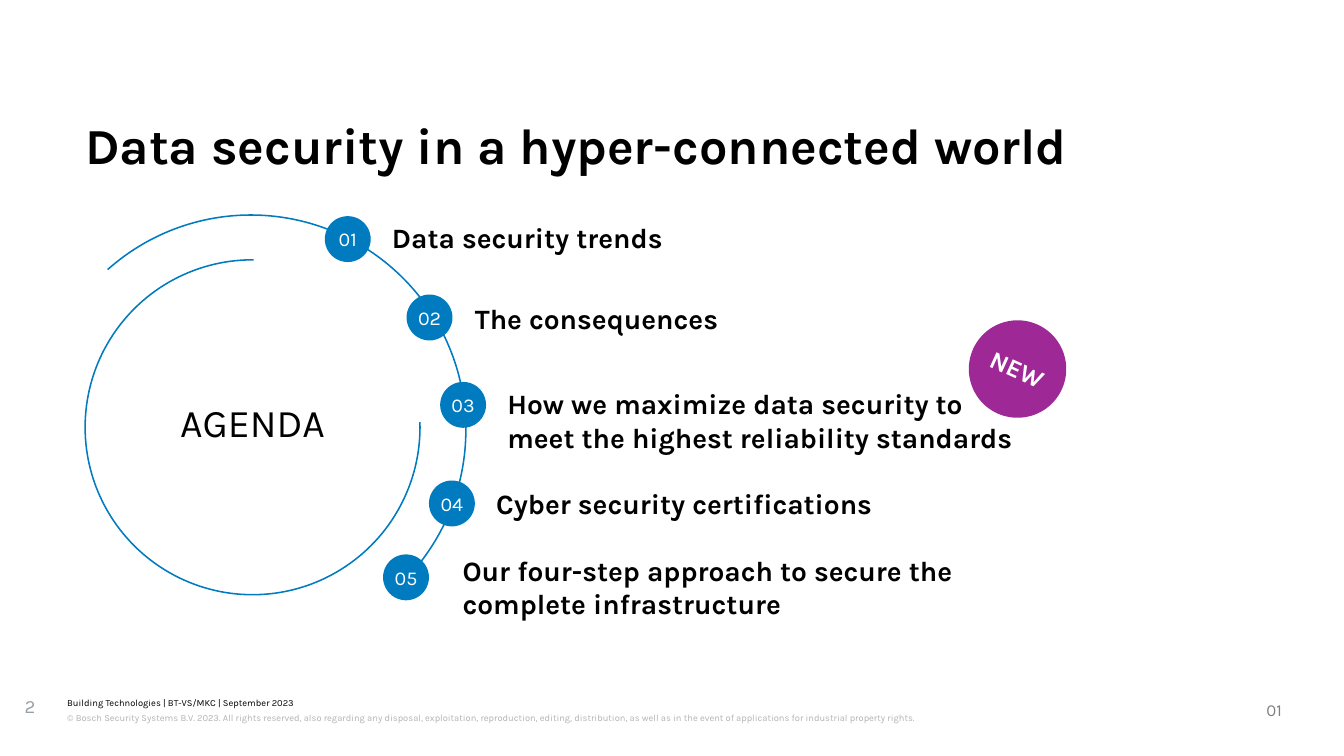
from dataclasses import dataclass
from typing import Optional

from pptx import Presentation
from pptx.dml.color import RGBColor
from pptx.enum import shapes, text
from pptx.util import Inches, Pt


@dataclass(frozen=True)
class Theme:
    font: str = "Karla"
    black: str = "000000"
    white: str = "FFFFFF"
    blue: str = "007BC0"
    purple: str = "9E2896"
    page_gray: str = "808080"
    number_gray: str = "999FA6"
    legal_gray: str = "B2B3B5"
    title: float = 32.4
    hub: float = 25.2
    item: float = 18
    new: float = 16
    marker: float = 12.6
    number: float = 12
    page: float = 10.8
    footer: float = 6


@dataclass(frozen=True)
class Box:
    left: float
    top: float
    width: float
    height: float

    def emu(self) -> tuple:
        return tuple(map(Inches, (self.left, self.top, self.width, self.height)))


@dataclass(frozen=True)
class Item:
    marker_left: float
    marker_top: float
    label: Box
    wording: str


@dataclass(frozen=True)
class Arc:
    box: Box
    start: float  # degrees, clockwise from the right
    end: float


T = Theme()
MARKER_SIZE = 0.41
ITEMS = [
    Item(2.9, 1.93, Box(3.5, 1.97, 3.54, 0.32), "Data security trends"),
    Item(3.63, 2.63, Box(4.24, 2.69, 4.28, 0.32), "The consequences"),
    Item(3.93, 3.41, Box(4.53, 3.45, 4.58, 0.32),
         "How we maximize data security to meet the highest reliability standards"),
    Item(3.83, 4.29, Box(4.43, 4.34, 3.54, 0.32), "Cyber security certifications"),
    Item(3.42, 4.95, Box(4.13, 4.94, 4.38, 0.32),
         "Our four-step approach to secure the complete infrastructure"),
]
ARCS = [
    Arc(Box(0.76, 2.32, 2.99, 2.99), 358.27, 270.36),
    Arc(Box(0.32, 1.92, 3.84, 3.84), 228.27, 37.71),
]


def write(sp, wording: str, size: float, color: str, bold: bool = False,
          centered: bool = False, inset: float = 0, top_inset: Optional[float] = None,
          spacing: Optional[float] = None) -> None:
    """Put one paragraph of text into a shape or text box."""
    tf = sp.text_frame
    tf.word_wrap = True
    tf.margin_left = tf.margin_right = tf.margin_bottom = Inches(inset)
    tf.margin_top = Inches(inset if top_inset is None else top_inset)
    tf.vertical_anchor = text.MSO_ANCHOR.MIDDLE if centered else text.MSO_ANCHOR.TOP
    p = tf.paragraphs[0]
    p.text = wording
    p.alignment = text.PP_ALIGN.CENTER if centered else text.PP_ALIGN.LEFT
    if spacing:
        p.line_spacing = spacing
    p.font.name = T.font
    p.font.size = Pt(size)
    p.font.bold = bold
    p.font.color.rgb = RGBColor.from_string(color)


def add_label(s, box: Box, wording: str, size: float, color: str = T.black, **style) -> None:
    write(s.shapes.add_textbox(*box.emu()), wording, size, color, **style)


def add_disc(s, box: Box, fill: str, wording: str, size: float,
             color: str = T.white, rotation: float = 0,
             kind=shapes.MSO_SHAPE.OVAL, **style) -> None:
    sp = s.shapes.add_shape(kind, *box.emu())
    sp.shadow.inherit = False
    sp.fill.solid()
    sp.fill.fore_color.rgb = RGBColor.from_string(fill)
    sp.line.fill.background()
    sp.rotation = rotation
    write(sp, wording, size, color, centered=True, **style)


def add_arc(s, arc: Arc) -> None:
    sp = s.shapes.add_shape(shapes.MSO_SHAPE.ARC, *arc.box.emu())
    sp.shadow.inherit = False
    sp.fill.background()
    sp.line.color.rgb = RGBColor.from_string(T.blue)
    sp.line.width = Pt(1)
    # One degree is 60000 angle units; adjustments count in 100000s
    sp.adjustments[0] = arc.start * 0.6
    sp.adjustments[1] = arc.end * 0.6


def main() -> None:
    prs = Presentation()
    prs.slide_width, prs.slide_height = Inches(12), Inches(6.75)
    s = prs.slides.add_slide(prs.slide_layouts[6])

    # Footer and page numbers
    add_label(s, Box(0.6, 6.22, 9.98, 0.12),
              "Building Technologies | BT-VS/MKC | September 2023", T.footer, spacing=1.07)
    add_label(s, Box(0.6, 6.34, 9.98, 0.24),
              "© Bosch Security Systems B.V. 2023. All rights reserved, also regarding any "
              "disposal, exploitation, reproduction, editing, distribution, as well as in the "
              "event of applications for industrial property rights.",
              T.footer, T.legal_gray, spacing=1.2)
    add_label(s, Box(0.22, 6.2, 0.32, 0.45), "2", T.number, T.number_gray)
    add_label(s, Box(11.21, 6.2, 0.7, 0.28), "01", T.page, T.page_gray,
              inset=0.1, top_inset=0.05)

    # Title
    add_label(s, Box(0.76, 0.91, 10.56, 0.81), "Data security in a hyper-connected world",
              T.title, bold=True, top_inset=0.07, spacing=1.07)

    # Agenda hub with its two arcs
    add_disc(s, Box(1.13, 2.68, 2.25, 2.25), T.white, "AGENDA", T.hub, T.black,
             top_inset=0.06, spacing=Pt(20.7))
    for arc in ARCS:
        add_arc(s, arc)

    # Numbered agenda items
    for n, item in enumerate(ITEMS, 1):
        marker = Box(item.marker_left, item.marker_top, MARKER_SIZE, MARKER_SIZE)
        add_disc(s, marker, T.blue, f"{n:02}", T.marker)
        add_label(s, item.label, item.wording, T.item, bold=True)

    # Badge
    add_disc(s, Box(8.65, 2.86, 0.87, 0.87), T.purple, "NEW", T.new, rotation=24.5,
             kind=shapes.MSO_SHAPE.FLOWCHART_CONNECTOR, bold=True, inset=0.04)

    prs.save("out.pptx")


if __name__ == "__main__":
    main()
